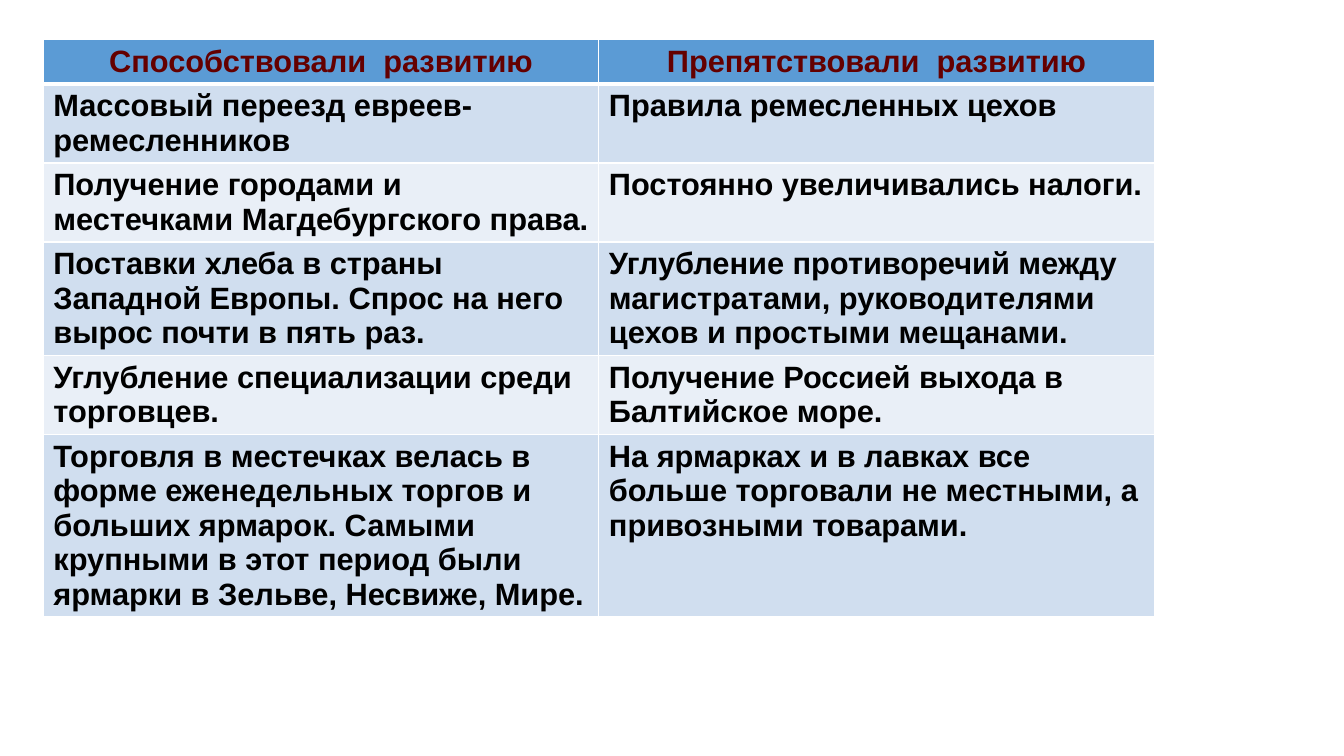
from lxml import etree
from pptx import Presentation
from pptx import util as u
from pptx.dml.color import RGBColor
from pptx.enum import text
from pptx.oxml import ns

WHITE = RGBColor(0xFF, 0xFF, 0xFF)
BLACK = RGBColor(0x00, 0x00, 0x00)
MAROON = RGBColor(0x64, 0x00, 0x00)
HEADER_BLUE = RGBColor(0x5B, 0x9B, 0xD5)
BANDS = (RGBColor(0xE9, 0xEF, 0xF7), RGBColor(0xD0, 0xDE, 0xEF))

FACTORS = [
    ("Способствовали  развитию", "Препятствовали  развитию"),
    ("Массовый переезд евреев-ремесленников", "Правила ремесленных цехов"),
    ("Получение городами и местечками Магдебургского права.",
     "Постоянно увеличивались налоги."),
    ("Поставки хлеба в страны Западной Европы. Спрос на него вырос почти в пять раз.",
     "Углубление противоречий между магистратами, руководителями цехов и простыми мещанами."),
    ("Углубление специализации среди торговцев.",
     "Получение Россией выхода в Балтийское море."),
    ("Торговля в местечках велась в форме еженедельных торгов и больших ярмарок. "
     "Самыми крупными в этот период были ярмарки в Зельве, Несвиже, Мире.",
     "На ярмарках и в лавках все больше торговали не местными, а привозными товарами."),
]
LINES_PER_ROW = (1, 2, 2, 3, 2, 5)


class FactorSlide:
    """Draws tables on one slide in a shared style, on a grid of columns and text lines."""

    font_name = "Arial"
    font_size = u.Pt(22)
    column = u.Inches(5.51)
    line = u.Inches(0.34)
    padding = u.Inches(0.1)

    def __init__(self, presentation):
        self.slide = presentation.slides.add_slide(presentation.slide_layouts[6])

    def table(self, left, top, rows, line_counts):
        heights = [self.padding + count * self.line for count in line_counts]
        columns = len(rows[0])
        table = self.slide.shapes.add_table(
            len(rows), columns, left, top, columns * self.column, sum(heights)).table
        for row_index, (row, height) in enumerate(zip(rows, heights)):
            table.rows[row_index].height = height
            for column_index, wording in enumerate(row):
                self.cell(table.cell(row_index, column_index), wording, row_index)

    def cell(self, cell, wording, row_index):
        is_header = row_index == 0
        self.borders(cell, top=3 if row_index == 1 else 1, bottom=3 if is_header else 1)
        cell.fill.solid()
        cell.fill.fore_color.rgb = HEADER_BLUE if is_header else BANDS[row_index % 2]
        cell.text = wording
        paragraph = cell.text_frame.paragraphs[0]
        paragraph.alignment = text.PP_ALIGN.CENTER if is_header else text.PP_ALIGN.LEFT
        font = paragraph.font
        font.name, font.size, font.bold = self.font_name, self.font_size, True
        font.color.rgb = MAROON if is_header else BLACK

    def borders(self, cell, top, bottom):
        properties = cell._tc.get_or_add_tcPr()
        for side, width in (("L", 1), ("R", 1), ("T", top), ("B", bottom)):
            border = etree.SubElement(properties, ns.qn(f"a:ln{side}"), w=str(u.Pt(width)))
            fill = etree.SubElement(border, ns.qn("a:solidFill"))
            etree.SubElement(fill, ns.qn("a:srgbClr"), val=str(WHITE))


def main():
    presentation = Presentation()
    presentation.slide_width = u.Inches(13.33)
    presentation.slide_height = u.Inches(7.5)
    factors = FactorSlide(presentation)
    factors.table(u.Inches(0.43), u.Inches(0.39), FACTORS, LINES_PER_ROW)
    presentation.save("out.pptx")


if __name__ == "__main__":
    main()
